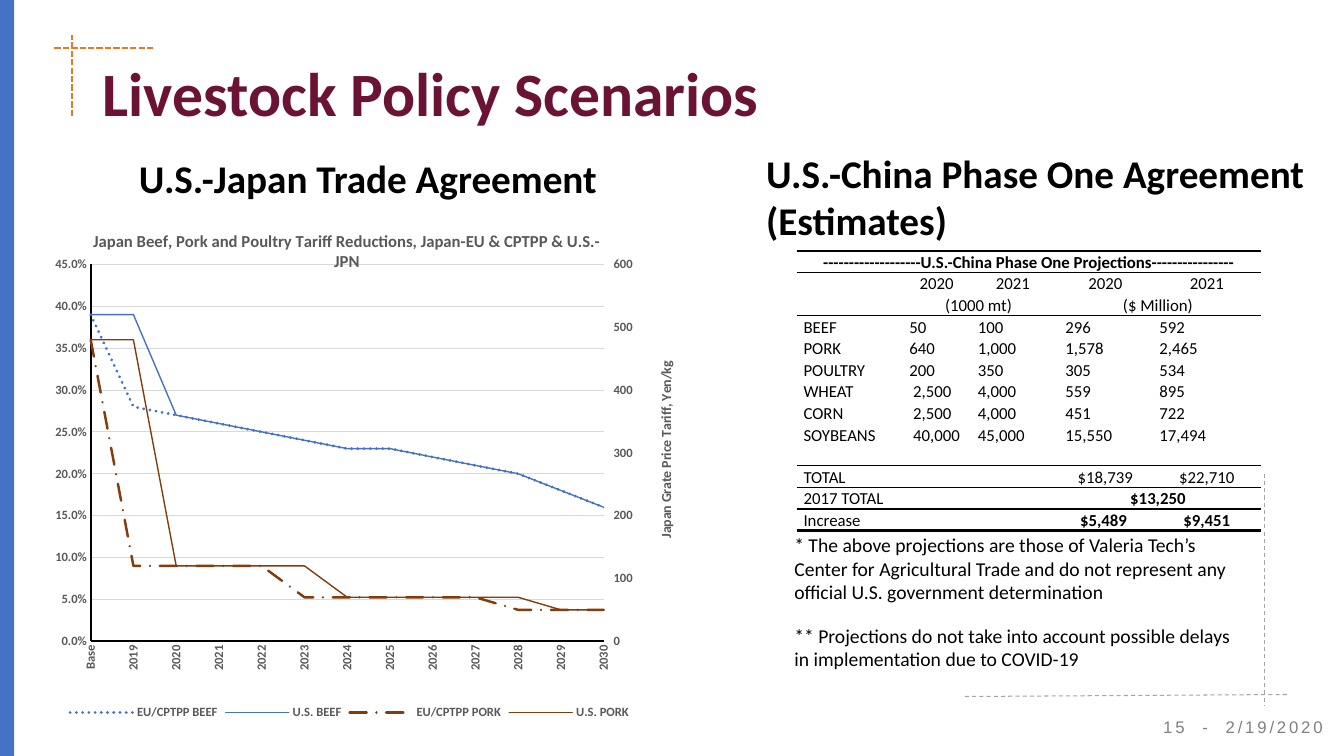
"""Build the livestock policy scenarios slide."""
from copy import deepcopy

from lxml import etree
from pptx import Presentation
from pptx import util as u
from pptx.chart import axis, data
from pptx.dml.color import RGBColor
from pptx.enum import chart as ch, dml, shapes, text
from pptx.oxml import ns

INK, GRAY, BLUE, BROWN, ORANGE = "000000", "595959", "4472C4", "843C0B", "E87822"
ALIGN = text.PP_ALIGN


def rgb(value):
    return RGBColor.from_string(value)


def style(font, size, color, bold=False, name="Calibri"):
    font.size, font.bold, font.name = u.Pt(size), bold, name
    font.color.rgb = rgb(color)


prs = Presentation()
prs.slide_width, prs.slide_height = u.Inches(13.33), u.Inches(7.5)
s = prs.slides.add_slide(prs.slide_layouts[5])

sp = s.shapes.add_shape(shapes.MSO_SHAPE.RECTANGLE, 0, 0, u.Inches(0.14), prs.slide_height)
sp.shadow.inherit = False
sp.fill.solid()
sp.fill.fore_color.rgb = rgb(BLUE)
sp.line.fill.background()

DASH = dml.MSO_LINE
for ends, color, width, dash in (
    ((0.54, 0.48, 1.54, 0.48), ORANGE, 1.5, DASH.SQUARE_DOT),
    ((0.71, 1.15, 0.71, 0.35), ORANGE, 1.5, DASH.SQUARE_DOT),
    ((12.54, 4.7, 12.54, 7), "A5A5A5", 0.75, DASH.DASH),
    ((9.57, 6.91, 12.77, 6.89), "A5A5A5", 0.75, DASH.DASH),
):
    line = s.shapes.add_connector(shapes.MSO_CONNECTOR.STRAIGHT, *map(u.Inches, ends))
    line.line.color.rgb, line.line.width, line.line.dash_style = rgb(color), u.Pt(width), dash
    etree.SubElement(line._element.spPr, ns.qn("a:effectLst"))

title = s.shapes.title
title.left, title.top, title.width, title.height = map(u.Inches, (0.92, 0.32, 11.5, 1.02))
tf = title.text_frame
tf.text = "Livestock Policy Scenarios"
tf.auto_size, tf.vertical_anchor = text.MSO_AUTO_SIZE.NONE, text.MSO_ANCHOR.BOTTOM
p = tf.paragraphs[0]
p.alignment, p.line_spacing = ALIGN.LEFT, 0.9
style(p.font, 44, "6B1335", True)

for box, words, size, bold, wrap in (
    ((1.28, 1.48, 4.81, 0.57), "U.S.-Japan Trade Agreement", 28, True, False),
    ((7.5, 1.43, 5.59, 1.04), "U.S.-China Phase One Agreement (Estimates)", 28, True, True),
    ((7.78, 5.24, 4.74, 0.81), "* The above projections are those of Valeria Tech’s Center for "
     "Agricultural Trade and do not represent any official U.S. government determination",
     14, False, True),
    ((7.78, 6.14, 4.6, 0.57), "** Projections do not take into account possible delays "
     "in implementation due to COVID-19", 14, False, True),
):
    tf = s.shapes.add_textbox(*map(u.Inches, box)).text_frame
    tf.word_wrap, tf.text = wrap, words
    style(tf.paragraphs[0].font, size, INK, bold)

tf = s.shapes.add_textbox(*map(u.Inches, (11.33, 7.07, 2, 0.3))).text_frame
tf.vertical_anchor = text.MSO_ANCHOR.MIDDLE
p = tf.paragraphs[0]
p.alignment, p.line_spacing, p.space_before = ALIGN.CENTER, 0.9, u.Pt(10)
r = p.add_run()
r.text = "15  -  2/19/2020"
style(r.font, 12, "808080", name="Arial")
r._r.get_or_add_rPr().set("spc", "200")

tariffs = data.CategoryChartData(number_format="General")
tariffs.categories = ["Base", *map(str, range(2019, 2031))]
beef = [0.27, 0.26, 0.25, 0.24, 0.23, 0.23, 0.22, 0.21, 0.2, 0.18, 0.16]
tariffs.add_series("EU/CPTPP BEEF", [0.39, 0.28] + beef)
tariffs.add_series("U.S. BEEF", [0.39, 0.39] + beef)
tariffs.add_series("EU/CPTPP PORK", [480] + [120] * 4 + [70] * 5 + [50] * 3)
tariffs.add_series("U.S. PORK", [480] * 2 + [120] * 4 + [70] * 5 + [50] * 2)
chart = s.shapes.add_chart(ch.XL_CHART_TYPE.LINE, *map(u.Inches, (0.25, 2.2, 6.48, 4.98)),
                           tariffs).chart
style(chart.font, 10, INK)
chart.has_title = True
chart.chart_title.text_frame.text = (
    "Japan Beef, Pork and Poultry Tariff Reductions, Japan-EU & CPTPP & U.S.-JPN")
style(chart.chart_title.text_frame.paragraphs[0].font, 12, GRAY, True)
chart.has_legend = True
chart.legend.position = ch.XL_LEGEND_POSITION.BOTTOM
chart.legend.include_in_layout = False
style(chart.legend.font, 9, GRAY, True)

looks = ((BLUE, 2.25, DASH.ROUND_DOT), (BLUE, 1, DASH.SOLID),
         (BROWN, 1.75, DASH.LONG_DASH_DOT), (BROWN, 1, DASH.SOLID))
for series, (color, width, dash) in zip(chart.plots[0].series, looks):
    series.smooth = False
    line = series.format.line
    line.color.rgb, line.width, line.dash_style = rgb(color), u.Pt(width), dash
    series._element.xpath("c:spPr/a:ln")[0].set("cap", "rnd")

years, percent = chart.category_axis, chart.value_axis
for ax in (years, percent):
    ax.major_tick_mark = ch.XL_TICK_MARK.NONE
    style(ax.tick_labels.font, 9, GRAY, True)
    ax.format.line.color.rgb, ax.format.line.width = rgb(INK), u.Pt(1.5)
years._element.xpath("c:txPr/a:bodyPr")[0].set("rot", "-5400000")
percent.minimum_scale, percent.maximum_scale, percent.major_unit = 0, 0.45, 0.05
percent.tick_labels.number_format = "0.0%"
percent.tick_labels.number_format_is_linked = False
grid = percent.major_gridlines.format.line
grid.color.rgb, grid.width = rgb("D9D9D9"), u.Pt(0.75)
for old in percent._element.xpath("c:crossBetween"):
    percent._element.remove(old)
cross = etree.Element(ns.qn("c:crossBetween"), val="midCat")
percent._element.xpath("c:crosses")[0].addnext(cross)

beef_lines = chart.plots[0]._element
plot_area = beef_lines.getparent()
pork_lines = deepcopy(beef_lines)
beef_lines.addnext(pork_lines)
for lines, unwanted in ((beef_lines, slice(2, 4)), (pork_lines, slice(0, 2))):
    for ser in lines.xpath("c:ser")[unwanted]:
        lines.remove(ser)
right_val, right_cat = deepcopy(percent._element), deepcopy(years._element)
percent._element.addnext(right_val)
right_val.addnext(right_cat)
for node, own, other in ((right_cat, "101", "102"), (right_val, "102", "101")):
    node.xpath("c:axId")[0].set("val", own)
    node.xpath("c:crossAx")[0].set("val", other)
for node, own in zip(pork_lines.xpath("c:axId"), ("101", "102")):
    node.set("val", own)
right_val.xpath("c:axPos")[0].set("val", "r")
right_val.xpath("c:crosses")[0].set("val", "max")
axis.CategoryAxis(right_cat).visible = False
yen = axis.ValueAxis(right_val)
yen.has_major_gridlines = False
yen.major_tick_mark = ch.XL_TICK_MARK.OUTSIDE
yen.maximum_scale, yen.major_unit = 600, 100
yen.tick_labels.number_format = "General"
yen.format.line.fill.background()
yen.axis_title.text_frame.text = "Japan Grate Price Tariff, Yen/kg"
style(yen.axis_title.text_frame.paragraphs[0].font, 10, GRAY, True)
yen.axis_title._element.xpath(".//a:bodyPr")[0].set("rot", "-5400000")

edges = [("xMode", "edge"), ("yMode", "edge")]
for owner, index, settings in (
    (plot_area, 0, [("layoutTarget", "inner"), *edges,
                    ("x", "0.101"), ("y", "0.085"), ("w", "0.791"), ("h", "0.751")]),
    (chart.chart_title._element, 1, [*edges, ("x", "0.1"), ("y", "0.01")]),
    (yen.axis_title._element, 1, [*edges, ("x", "0.97"), ("y", "0.27")]),
):
    for old in owner.xpath("c:layout"):
        owner.remove(old)
    layout = etree.Element(ns.qn("c:layout"))
    manual = etree.SubElement(layout, ns.qn("c:manualLayout"))
    for tag, val in settings:
        etree.SubElement(manual, ns.qn("c:" + tag), val=val)
    owner.insert(index, layout)

rows = [row.split("|") for row in (
    "-------------------U.S.-China Phase One Projections----------------||||",
    "|2020|2021| 2020|2021",
    "|(1000 mt)||($ Million)|",
    "BEEF|50|100| 296|592",
    "PORK|640|1,000| 1,578|2,465",
    "POULTRY|200|350| 305|534",
    "WHEAT| 2,500|4,000| 559|895",
    "CORN| 2,500|4,000| 451|722",
    "SOYBEANS| 40,000|45,000| 15,550|17,494",
    "||||",
    "TOTAL||| $18,739|$22,710",
    "2017 TOTAL|||$13,250|",
    "Increase|||$5,489|$9,451",
)]
rules = {0: 1, 1: 1, 3: 1, 10: 1, 11: 1, 12: 1, 13: 2.25}
frame = s.shapes.add_table(13, 5, *map(u.Inches, (7.9, 2.49, 4.61, 2.66)))
table = frame.table
table.first_row = table.horz_banding = False
table._tbl.xpath("a:tblPr/a:tableStyleId")[0].text = "{2D5ABB26-0587-4C30-8999-92F81FD0307C}"
for col, width in zip(table.columns, (1.05, 0.68, 0.83, 0.97, 1.08)):
    col.width = u.Inches(width)
for i, row in enumerate(rows):
    table.rows[i].height = u.Inches(2.66 / 13)
    for j, words in enumerate(row):
        cell = table.cell(i, j)
        cell.margin_left = cell.margin_right = u.Inches(0.07)
        cell.margin_top = cell.margin_bottom = 0
        p = cell.text_frame.paragraphs[0]
        p.text, p.line_spacing = words, 1.07
        p.alignment = ALIGN.CENTER if i < 3 or (i > 9 and j) else ALIGN.LEFT
        style(p.font, 12, INK, i == 0 or (i > 10 and j > 0))
        if not words:
            etree.SubElement(p._p, ns.qn("a:endParaRPr"), sz="1200")
        for tag, edge in (("a:lnT", i), ("a:lnB", i + 1)):
            ln = etree.SubElement(cell._tc.get_or_add_tcPr(), ns.qn(tag),
                                  w=str(u.Pt(rules.get(edge, 0))))
            fill = etree.SubElement(ln, ns.qn("a:solidFill" if edge in rules else "a:noFill"))
            if edge in rules:
                etree.SubElement(fill, ns.qn("a:srgbClr"), val=INK)
        cell.fill.background()
for i, first, last in ((0, 0, 4), (2, 1, 2), (2, 3, 4), (11, 3, 4)):
    table.cell(i, first).merge(table.cell(i, last))

prs.save("out.pptx")
